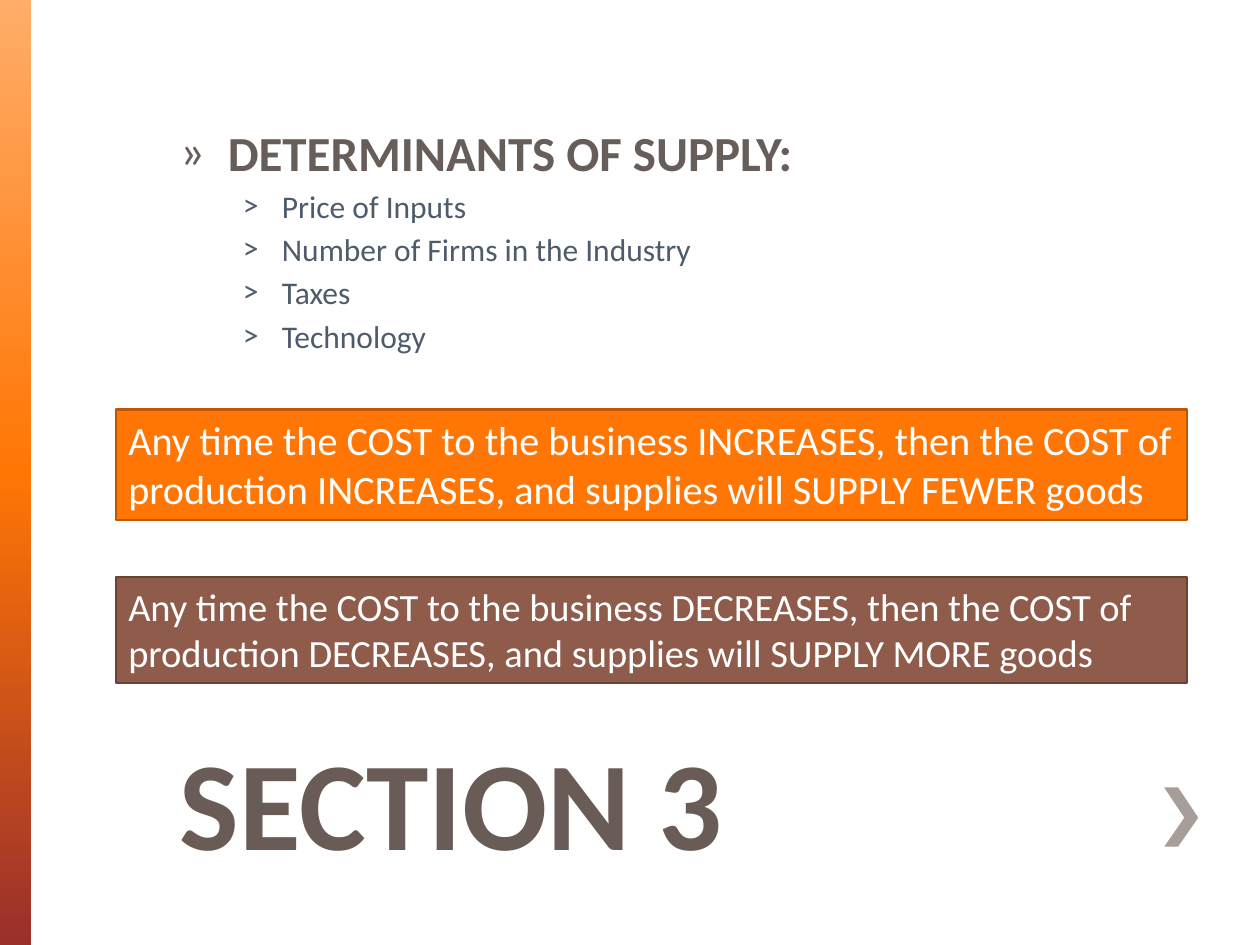
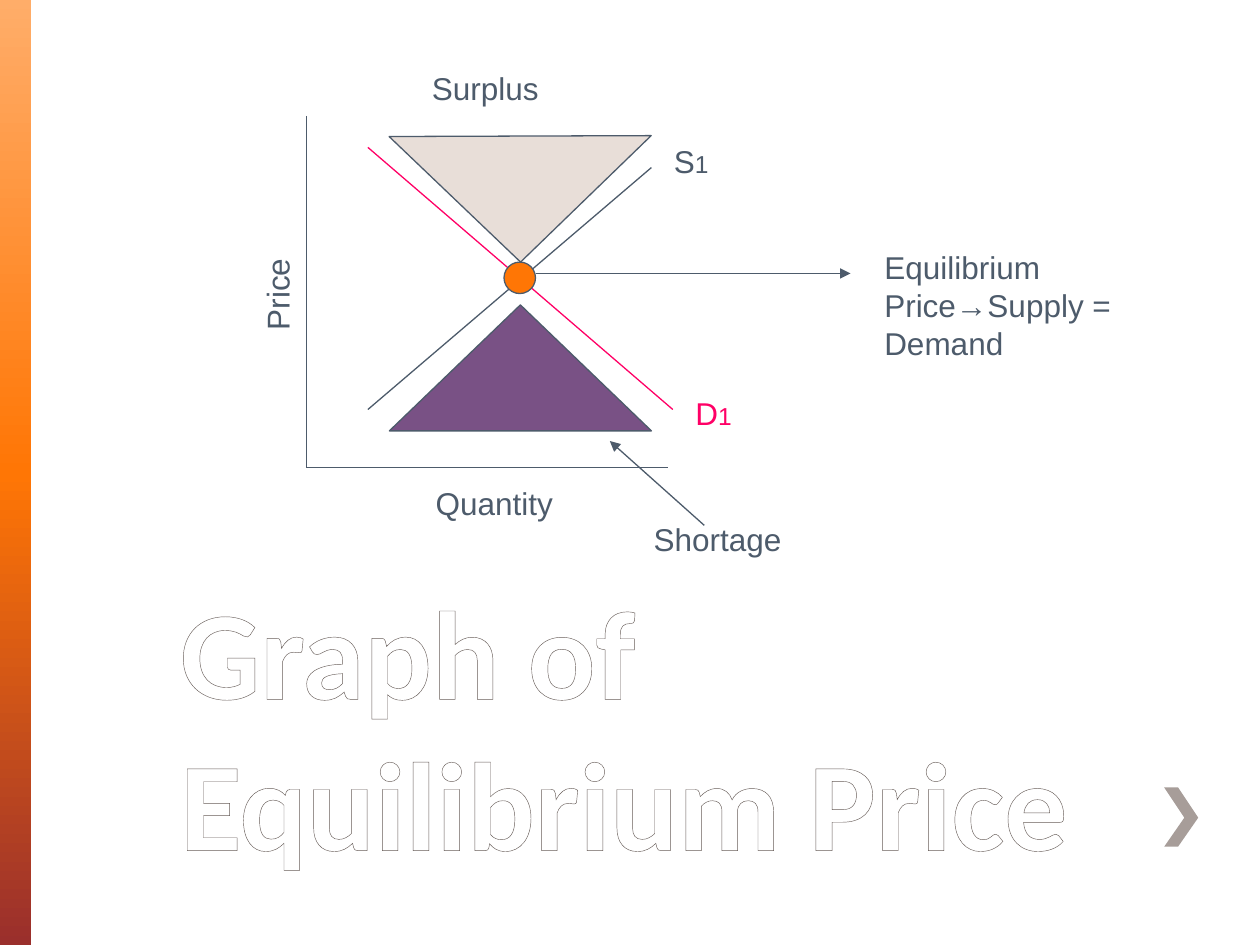
from copy import deepcopy
from lxml.etree import SubElement
from pptx import Presentation
from pptx.dml.color import RGBColor
from pptx.enum.shapes import MSO_CONNECTOR, MSO_SHAPE
from pptx.enum.text import MSO_ANCHOR, PP_ALIGN
from pptx.oxml.ns import qn
from pptx.util import Inches, Pt

COLORS = {
    "light": "FFAD69", "orange": "FF7605", "red": "9A2F2C",
    "chevron": "A79D99", "heading": "675D59", "title": "695C57",
    "slate": "4D5B6B", "white": "FFFFFF", "pink": "FF0066",
    "brown": "8F5B4B", "brown_edge": "6A4337", "orange_edge": "BD5704",
    "surplus": "E8DED8", "shortage": "795185",
}
BAND_STOPS = [("light", 0), ("orange", 0.5), ("red", 1)]
CHEVRON = [(9.35, 6.25), (9.24, 6.25), (9.4, 6.49), (9.24, 6.72),
           (9.35, 6.72), (9.51, 6.49)]

SECTION_TITLE = "SECTION 3"
DETERMINANTS_HEADING = "DETERMINANTS OF SUPPLY:"
DETERMINANTS = ["Price of Inputs", "Number of Firms in the Industry", "Taxes", "Technology"]
COST_RULES = [
    ("Any time the COST to the business INCREASES, then the COST of production "
     "INCREASES, and supplies will SUPPLY FEWER goods",
     3.25, 0.88, 23, "orange", "orange_edge"),
    ("Any time the COST to the business DECREASES, then the COST of production "
     "DECREASES, and supplies will SUPPLY MORE goods",
     4.58, 0.84, 22, "brown", "brown_edge"),
]

GRAPH_TITLE = "Graph of Equilibrium Price"
GRAPH_LINES = [
    ((2.43, 0.92), (2.43, 3.71), "slate", False),
    ((2.43, 3.71), (5.3, 3.71), "slate", False),
    ((2.92, 3.25), (5.17, 1.33), "slate", False),
    ((2.92, 1.17), (5.34, 3.25), "pink", False),
    ((4.25, 2.17), (6.75, 2.17), "slate", True),
    ((5.59, 4.17), (4.84, 3.5), "slate", True),
]
GRAPH_AREAS = [
    (MSO_SHAPE.OVAL, (4, 2.08, 0.25, 0.25), "orange", 0),
    (MSO_SHAPE.ISOSCELES_TRIANGLE, (3.09, 1.08, 2.08, 1), "surplus", 179.8),
    (MSO_SHAPE.ISOSCELES_TRIANGLE, (3.09, 2.42, 2.08, 1), "shortage", 0),
]
GRAPH_LABELS = [
    (["Price"], (1.59, 1.91, 1.22, 0.4), "slate", 270),
    (["Quantity"], (3.36, 3.79, 1.36, 0.4), "slate", 0),
    (["S", "1"], (5.25, 1.08, 0.64, 0.5), "slate", 0),
    (["D", "1"], (5.42, 3.08, 0.54, 0.5), "pink", 0),
    (["Equilibrium Price→Supply = Demand"], (6.92, 1.92, 2, 1), "slate", 0),
    (["Surplus"], (3.33, 0.5, 1.83, 0.5), "slate", 0),
    (["Shortage"], (5.09, 4.08, 1.83, 0.5), "slate", 0),
]


def rgb(color):
    return RGBColor.from_string(COLORS[color])


def style(run, size, color, font="Calibri", bold=False):
    run.font.size = Pt(size)
    run.font.name = font
    run.font.bold = bold
    run.font.color.rgb = rgb(color)


def add_text(slide, box):
    text = slide.shapes.add_textbox(*map(Inches, box))
    text.text_frame.word_wrap = True
    return text


def add_filled(slide, kind, box, fill, edge, width):
    area = slide.shapes.add_shape(kind, *map(Inches, box))
    area.shadow.inherit = False
    area.fill.solid()
    area.fill.fore_color.rgb = rgb(fill)
    area.line.color.rgb = rgb(edge)
    area.line.width = Pt(width)
    return area


def add_band(slide):
    band = slide.shapes.add_shape(MSO_SHAPE.RECTANGLE, 0, 0, Inches(0.25), Inches(7.5))
    band.shadow.inherit = False
    band.line.fill.background()
    band.fill.gradient()
    band.fill.gradient_angle = 270
    stops = band.element.spPr.find(qn("a:gradFill")).find(qn("a:gsLst"))
    stops.append(deepcopy(stops[-1]))
    for stop, (color, position) in zip(band.fill.gradient_stops, BAND_STOPS):
        stop.color.rgb = rgb(color)
        stop.position = position


def add_chevron(slide):
    points = [(Inches(x), Inches(y)) for x, y in CHEVRON]
    outline = slide.shapes.build_freeform(*points[0])
    outline.add_line_segments(points[1:])
    chevron = outline.convert_to_shape()
    chevron.shadow.inherit = False
    chevron.fill.solid()
    chevron.fill.fore_color.rgb = rgb("chevron")
    chevron.line.fill.background()


def add_title(slide, words, color):
    title = add_text(slide, (1.33, 5.75, 7.92, 1.25)).text_frame
    title.vertical_anchor = MSO_ANCHOR.BOTTOM
    title.text = words
    run = title.paragraphs[0].runs[0]
    style(run, 72, color, bold=True)
    properties = run._r.get_or_add_rPr()
    outline = SubElement(properties, qn("a:ln"))
    outline.set("w", str(Pt(1)))
    fill = SubElement(outline, qn("a:solidFill"))
    SubElement(fill, qn("a:srgbClr")).set("val", COLORS["heading"])
    properties.insert(0, outline)


def add_themed_slide(deck, title, title_color):
    slide = deck.slides.add_slide(deck.slide_layouts[6])
    add_band(slide)
    add_chevron(slide)
    add_title(slide, title, title_color)
    return slide


def add_bullet(paragraph, mark, margin, hanging):
    properties = paragraph._p.get_or_add_pPr()
    properties.set("marL", str(Inches(margin)))
    properties.set("indent", str(-Inches(hanging)))
    SubElement(properties, qn("a:buFont")).set("typeface", "Calibri")
    SubElement(properties, qn("a:buChar")).set("char", mark)


def add_determinants(slide):
    body = add_text(slide, (1.33, 0.92, 8.17, 4.83)).text_frame
    body.text = "\n".join([DETERMINANTS_HEADING] + DETERMINANTS)
    heading, *items = body.paragraphs
    style(heading.runs[0], 28, "heading", bold=True)
    add_bullet(heading, "»", 0.38, 0.38)
    for item in items:
        style(item.runs[0], 18, "slate")
        item.level = 1
        item.space_before = Pt(3.2)
        add_bullet(item, "˃", 0.81, 0.31)


def add_cost_rule(slide, words, top, height, size, fill, edge):
    rule = add_filled(slide, MSO_SHAPE.RECTANGLE, (0.92, top, 8.5, height), fill, edge, 1.25)
    frame = rule.text_frame
    frame.word_wrap = True
    frame.vertical_anchor = MSO_ANCHOR.TOP
    frame.text = words
    frame.paragraphs[0].alignment = PP_ALIGN.LEFT
    style(frame.paragraphs[0].runs[0], size, "white")


def add_graph_line(slide, start, end, color, arrow):
    line = slide.shapes.add_connector(MSO_CONNECTOR.STRAIGHT, *map(Inches, start + end))
    line.line.color.rgb = rgb(color)
    line.line.width = Pt(0.75)
    properties = line._element.spPr
    if arrow:
        SubElement(properties.find(qn("a:ln")), qn("a:tailEnd")).set("type", "triangle")
    SubElement(properties, qn("a:effectLst"))


def add_label(slide, parts, box, color, rotation):
    label = add_text(slide, box)
    label.rotation = rotation
    paragraph = label.text_frame.paragraphs[0]
    for words, size in zip(parts, (18, 14)):
        run = paragraph.add_run()
        run.text = words
        style(run, size, color, "Arial")


def main():
    deck = Presentation()
    deck.slide_width, deck.slide_height = Inches(10), Inches(7.5)

    section = add_themed_slide(deck, SECTION_TITLE, "title")
    add_determinants(section)
    for rule in COST_RULES:
        add_cost_rule(section, *rule)

    graph = add_themed_slide(deck, GRAPH_TITLE, "white")
    for line in GRAPH_LINES:
        add_graph_line(graph, *line)
    for kind, box, fill, rotation in GRAPH_AREAS:
        add_filled(graph, kind, box, fill, "slate", 0.75).rotation = rotation
    for label in GRAPH_LABELS:
        add_label(graph, *label)

    deck.save("out.pptx")


if __name__ == "__main__":
    main()
